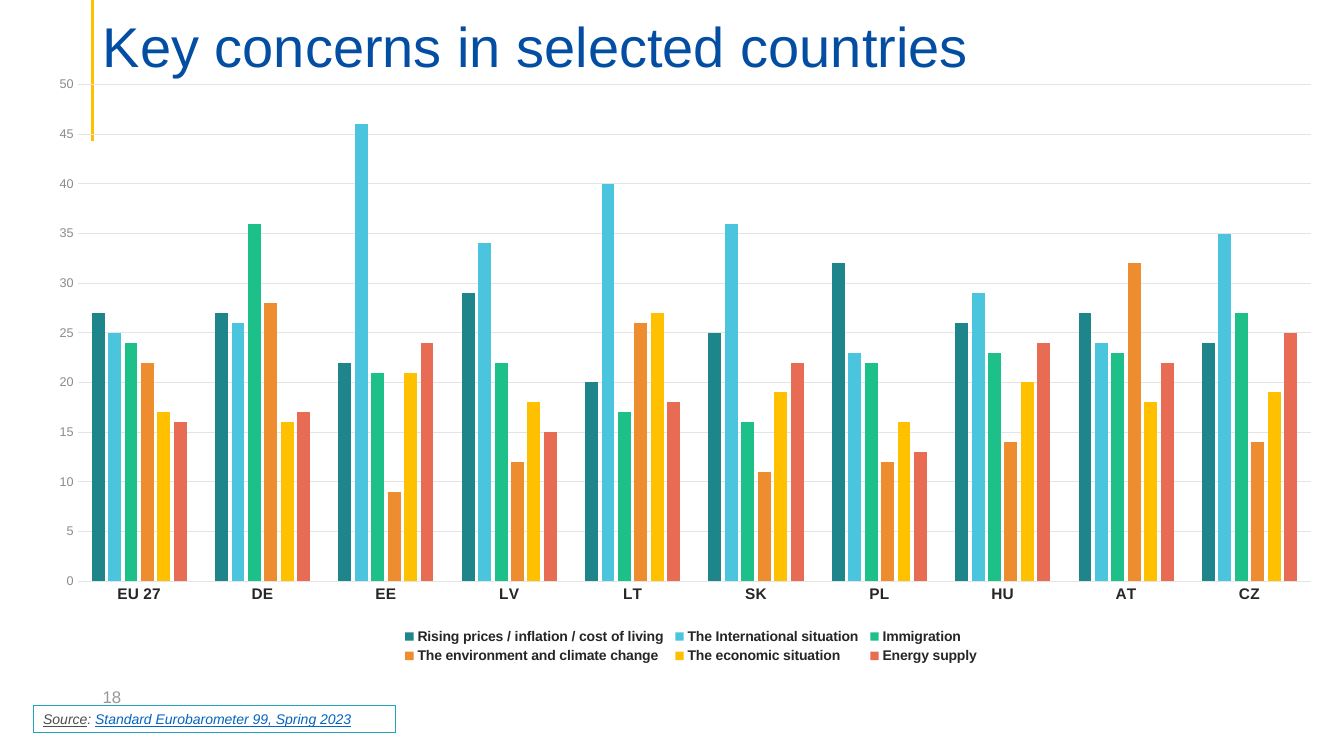
from lxml.etree import SubElement
from pptx import Presentation
from pptx.chart.data import CategoryChartData
from pptx.dml.color import RGBColor
from pptx.enum.chart import XL_CHART_TYPE, XL_LEGEND_POSITION, XL_TICK_MARK
from pptx.enum.shapes import MSO_CONNECTOR, MSO_SHAPE
from pptx.enum.text import MSO_ANCHOR, PP_ALIGN
from pptx.oxml import parse_xml
from pptx.oxml.ns import nsdecls, qn
from pptx.util import Inches, Pt

COLORS = {
    "title": "034EA2", "accent": "FFC000", "number": "979797",
    "frame": "23A2BC", "text": "4D4D4D", "link": "0563C1",
    "grid": "E4E4E4", "label": "262626", "value": "8B8B8B",
}
COUNTRIES = ["EU 27", "DE", "EE", "LV", "LT", "SK", "PL", "HU", "AT", "CZ"]
CONCERNS = [
    ("Rising prices / inflation / cost of living", "1E858B",
     [27, 27, 22, 29, 20, 25, 32, 26, 27, 24]),
    ("The International situation", "4BC5DE",
     [25, 26, 46, 34, 40, 36, 23, 29, 24, 35]),
    ("Immigration", "1EC08A",
     [24, 36, 21, 22, 17, 16, 22, 23, 23, 27]),
    ("The environment and climate change", "ED8D2F",
     [22, 28, 9, 12, 26, 11, 12, 14, 32, 14]),
    ("The economic situation", "FFC000",
     [17, 16, 21, 18, 27, 19, 16, 20, 18, 19]),
    ("Energy supply", "E76C53",
     [16, 17, 24, 15, 18, 22, 13, 24, 22, 25]),
]


def rgb(name):
    return RGBColor.from_string(COLORS[name])


def set_all(target, **values):
    for name, value in values.items():
        setattr(target, name, value)


class SlideBuilder:
    font_name = "Arial"

    def __init__(self, slide):
        self.slide = slide

    def style_font(self, font, size, color, **values):
        set_all(font, name=self.font_name, size=Pt(size), **values)
        font.color.rgb = rgb(color)

    def style_line(self, line, color, width):
        line.color.rgb = rgb(color)
        line.width = Pt(width)

    def fill_text(self, shape, runs, **frame_values):
        """Fill one left-aligned paragraph with (text, size, color, format) runs."""
        set_all(shape.text_frame, word_wrap=True, **frame_values)
        paragraph = shape.text_frame.paragraphs[0]
        paragraph.alignment = PP_ALIGN.LEFT
        for text, size, color, values in runs:
            run = paragraph.add_run()
            run.text = text
            self.style_font(run.font, size, color, **values)
        return paragraph

    def rule(self, left, top, right, bottom, color, width):
        ends = [Inches(value) for value in (left, top, right, bottom)]
        connector = self.slide.shapes.add_connector(MSO_CONNECTOR.STRAIGHT, *ends)
        self.style_line(connector.line, color, width)
        SubElement(connector._element.spPr, qn("a:effectLst"))

    def title(self, text, left, top, width, height):
        title = self.slide.shapes.title
        set_all(title, left=Inches(left), top=Inches(top),
                width=Inches(width), height=Inches(height))
        paragraph = self.fill_text(title, [(text, 40, "title", {})],
                                   vertical_anchor=MSO_ANCHOR.BOTTOM,
                                   margin_bottom=Inches(0.3))
        paragraph.line_spacing = 0.9

    def text(self, runs, *box):
        shape = self.slide.shapes.add_textbox(*map(Inches, box))
        self.fill_text(shape, runs, vertical_anchor=MSO_ANCHOR.MIDDLE)

    def framed_text(self, runs, *box):
        shape = self.slide.shapes.add_shape(MSO_SHAPE.RECTANGLE, *map(Inches, box))
        shape.shadow.inherit = False
        shape.fill.background()
        self.style_line(shape.line, "frame", 0.75)
        self.fill_text(shape, runs, vertical_anchor=MSO_ANCHOR.TOP)

    def layout(self, parent, x, y, width, height, inner=False):
        """Place a chart part by fractions of the chart area."""
        target = '<c:layoutTarget val="inner"/>' if inner else ""
        layout = parse_xml(
            f'<c:layout {nsdecls("c")}><c:manualLayout>{target}'
            '<c:xMode val="edge"/><c:yMode val="edge"/>'
            f'<c:x val="{x}"/><c:y val="{y}"/><c:w val="{width}"/><c:h val="{height}"/>'
            '</c:manualLayout></c:layout>')
        for old in parent.findall(qn("c:layout")):
            parent.remove(old)
        position = 0 if inner else 1
        parent.insert(position, layout)

    def column_chart(self, categories, series_rows, *box):
        data = CategoryChartData(number_format="0")
        data.categories = categories
        for name, _, values in series_rows:
            data.add_series(name, values)
        chart = self.slide.shapes.add_chart(
            XL_CHART_TYPE.COLUMN_CLUSTERED, *map(Inches, box), data).chart
        set_all(chart, has_title=False, has_legend=True)
        self.style_font(chart.font, 10, "text")

        # Columns
        plot = chart.plots[0]
        set_all(plot, gap_width=219, overlap=-27, vary_by_categories=False)
        for series, (_, color, _) in zip(plot.series, series_rows):
            series.format.fill.solid()
            series.format.fill.fore_color.rgb = RGBColor.from_string(color)

        # Axes
        category_axis, value_axis = chart.category_axis, chart.value_axis
        for axis in (category_axis, value_axis):
            set_all(axis, major_tick_mark=XL_TICK_MARK.NONE,
                    minor_tick_mark=XL_TICK_MARK.NONE)
        self.style_font(category_axis.tick_labels.font, 11, "label", bold=True)
        self.style_line(category_axis.format.line, "grid", 0.75)
        set_all(value_axis, minimum_scale=0, maximum_scale=50, major_unit=5,
                has_major_gridlines=True)
        self.style_font(value_axis.tick_labels.font, 9, "value", bold=False)
        value_axis.format.line.fill.background()
        self.style_line(value_axis.major_gridlines.format.line, "grid", 0.75)

        # Legend and plot position
        legend = chart.legend
        set_all(legend, position=XL_LEGEND_POSITION.BOTTOM, include_in_layout=False)
        self.style_font(legend.font, 10, "label", bold=True)
        self.layout(legend._element, 0.28, 0.93, 0.45, 0.07)
        plot_area = chart._chartSpace.chart.plotArea
        self.layout(plot_area, 0.034, 0.03, 0.947, 0.827, inner=True)


def main():
    presentation = Presentation()
    set_all(presentation, slide_width=Inches(13.33), slide_height=Inches(7.5))
    slide = presentation.slides.add_slide(presentation.slide_layouts[5])
    builder = SlideBuilder(slide)

    # Heading
    builder.rule(0.92, 0, 0.92, 1.4, "accent", 2.25)
    builder.title("Key concerns in selected countries", 0.92, 0.23, 11.9, 0.86)

    # Page number and source
    builder.text([("18", 12, "number", {})], 0.92, 6.71, 3, 0.4)
    builder.framed_text([
        ("Source", 10, "text", {"italic": True, "underline": True}),
        (": ", 10, "text", {"italic": True}),
        ("Standard Eurobarometer 99, Spring 2023", 10, "link",
         {"italic": True, "underline": True}),
    ], 0.33, 7, 3.59, 0.27)

    # Concerns by country
    builder.column_chart(COUNTRIES, CONCERNS, 0.33, 0.66, 12.92, 5.96)

    presentation.save("out.pptx")


if __name__ == "__main__":
    main()
